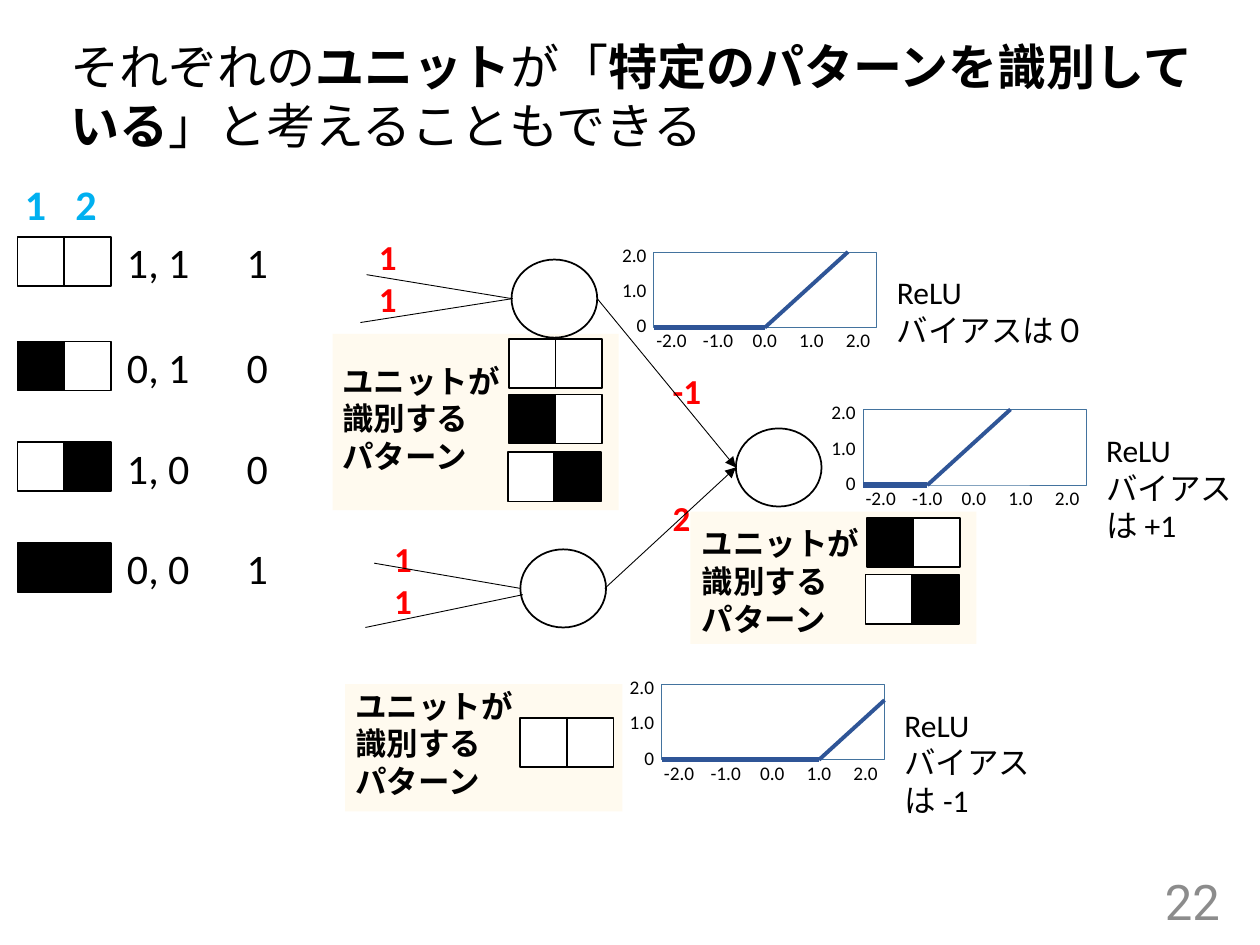
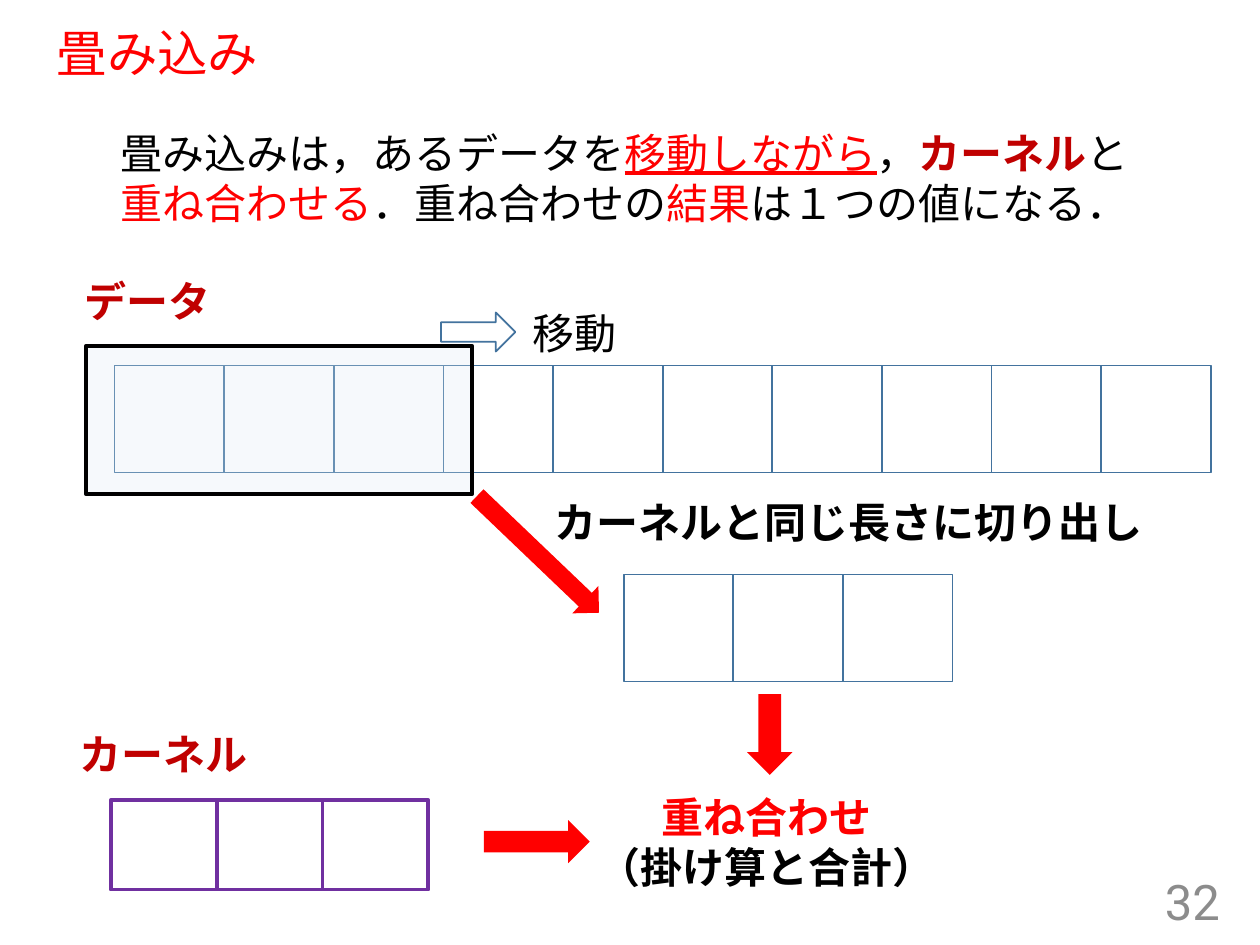
from lxml import etree
from pptx import Presentation
from pptx.dml.color import RGBColor
from pptx.enum import shapes, text
from pptx.oxml import ns
from pptx import util as u

COLORS = {
    "black": "000000", "white": "FFFFFF", "red": "FF0000", "dark red": "C00000",
    "cyan": "00B0F0", "gray": "8C8C8C", "cream": "FFF2CC", "pale blue": "DEEBF7",
    "steel": "43739E", "curve": "2F5597", "purple": "7030A0",
}
KINDS = shapes.MSO_SHAPE
LEFT, CENTER, RIGHT = text.PP_ALIGN.LEFT, text.PP_ALIGN.CENTER, text.PP_ALIGN.RIGHT
TOP, MIDDLE = text.MSO_ANCHOR.TOP, text.MSO_ANCHOR.MIDDLE

presentation = Presentation()
presentation.slide_width, presentation.slide_height = u.Inches(10), u.Inches(7.5)
COLUMN = presentation.slide_width / 100
ROW = presentation.slide_height / 75


def put(slide, kind, left, top, width, height, fill=None, line=None, weight=1, alpha=None):
    box = [int(left * COLUMN), int(top * ROW), int(width * COLUMN), int(height * ROW)]
    if kind is None:
        return slide.shapes.add_textbox(*box)
    shape = slide.shapes.add_shape(kind, *box)
    shape.shadow.inherit = False
    for part, color in ((shape.fill, fill), (shape.line.fill, line)):
        if color:
            part.solid()
            part.fore_color.rgb = RGBColor.from_string(COLORS[color])
        else:
            part.background()
    if line:
        shape.line.width = u.Pt(weight)
    if alpha:
        color_element = shape._element.spPr.find(ns.qn("a:solidFill"))[0]
        etree.SubElement(color_element, ns.qn("a:alpha"), val=str(alpha * 1000))
    return shape


def write(shape, paragraphs, align=LEFT, anchor=TOP, spacing=None, color="black", **base):
    frame = shape.text_frame
    for name, value in {"word_wrap": True, "auto_size": text.MSO_AUTO_SIZE.NONE,
                        "vertical_anchor": anchor}.items():
        setattr(frame, name, value)
    for index, runs in enumerate(paragraphs):
        paragraph = frame.add_paragraph() if index else frame.paragraphs[0]
        paragraph.alignment = align
        paragraph.line_spacing = spacing
        for words, changes in [(runs, {})] if isinstance(runs, str) else runs:
            run = paragraph.add_run()
            run.text = words
            values = {"name": "Calibri", "bold": False, "color": color, **base, **changes}
            run.font.color.rgb = RGBColor.from_string(COLORS[values.pop("color")])
            values["size"] = u.Pt(values["size"])
            for name, value in values.items():
                setattr(run.font, name, value)
            etree.SubElement(run._r.get_or_add_rPr(), ns.qn("a:ea"), typeface="Calibri")


BOLD = {"bold": True}
RED = {"color": "red"}
pages = [
    ("22", (4.6, 2.4, 93, 10.4),
     [[("それぞれの", {}), ("ユニット", BOLD), ("が「", {}), ("特定のパターンを識別して", BOLD)],
      [("いる", BOLD), ("」と考えることもできる", {})]],
     {"size": 28}),
    ("32", (3.5, 1.9, 92.5, 5.1), ["畳み込み"],
     {"size": 28.8, "name": "Roboto", "color": "red", "anchor": MIDDLE, "spacing": 0.9}),
]
for number, (left, top, width, height), title, style in pages:
    slide = presentation.slides.add_slide(presentation.slide_layouts[5])
    position = {"left": left * COLUMN, "top": top * ROW,
                "width": width * COLUMN, "height": height * ROW}
    for name, value in position.items():
        setattr(slide.shapes.title, name, int(value))
    write(slide.shapes.title, title, **style)
    write(put(slide, None, 75.3, 69.5, 22.5, 4), [number], align=RIGHT, anchor=MIDDLE,
          size=28, name="Roboto", color="gray")
units, convolution = presentation.slides

panels = [
    (26.4, 26.5, 22.7, 14, 26.2, 28.2),
    (27.4, 54.3, 22, 10.1, 27.2, 54),
    (54.8, 40.6, 22.7, 10.5, 54.7, 41.1),
]
for left, top, width, height, text_left, text_top in panels:
    put(units, KINDS.RECTANGLE, left, top, width, height, fill="cream", alpha=31)
    write(put(units, None, text_left, text_top, 15, 10.1),
          ["ユニットが", "識別する", "パターン"], size=18, bold=True)

inputs = [(18.8, "11", "1"), (27.1, "01", "0"), (35.1, "10", "0"), (43.1, "00", "1")]
patterns = [(1.4, top, pixels) for top, pixels, answer in inputs]
patterns += [(40.4, 26.9, "11"), (40.4, 31.3, "01"), (40.3, 35.9, "10"),
             (41.3, 57, "11"), (68.8, 41.1, "01"), (68.7, 45.6, "10")]
for left, top, pixels in patterns:
    for index, pixel in enumerate(pixels):
        put(units, KINDS.RECTANGLE, left + index * 3.7, top, 3.7, 3.9,
            fill="white" if pixel == "1" else "black", line="black")

for top, pixels, answer in inputs:
    write(put(units, None, 9.1, top - 0.5, 8, 5), [", ".join(pixels)], size=24)
    write(put(units, None, 18.6, top - 0.5, 4, 5), [answer], size=24)
for left, label in ((1, "1"), (5, "2")):
    write(put(units, None, left, 13.7, 4, 5), [label], size=24, bold=True, color="cyan")

for left, top in ((40.6, 20.6), (41.3, 43.6), (58.4, 34)):
    put(units, KINDS.OVAL, left, top, 6.8, 6.2, line="black")
weights = [(29.1, 18.2, ["1", "1"]), (30.3, 42.2, ["1", "1"]),
           (52.4, 28.8, ["-1"]), (52.4, 38.9, ["2"])]
for left, top, values in weights:
    write(put(units, None, left, top, 5, 7.8), values, size=20, bold=True, color="red")

lines = [
    (29.1, 21.8, 40.6, 23.7, "black", 0.5, False),
    (28.6, 25.6, 40.7, 23.7, "black", 0.5, False),
    (29.7, 44.7, 41.3, 46.7, "black", 0.5, False),
    (29, 49.8, 41.5, 47.2, "black", 0.5, False),
    (47.4, 23.7, 58.4, 37.1, "black", 0.5, True),
    (48, 46.7, 58.4, 37.1, "black", 0.5, True),
]

PLOT_WIDTH, PLOT_HEIGHT, TICK_STEP = 17.7, 6, 3.7
plots = [
    (51.9, 20, 0, ["ReLU", "バイアスは０"]),
    (68.5, 32.5, 1, ["ReLU", "バイアス", "は +1"]),
    (52.5, 54.3, -1, ["ReLU", "バイアス", "は -1"]),
]
for left, top, bias, caption in plots:
    put(units, KINDS.RECTANGLE, left, top, PLOT_WIDTH, PLOT_HEIGHT,
        fill="white", line="steel", weight=0.5)
    for index, label in enumerate(["2.0", "1.0", "0"]):
        write(put(units, None, left - 4.6, top - 1.2 + index * 2.8, 5, 2.8), [label],
              align=RIGHT, size=11)
    for index, label in enumerate(["-2.0", "-1.0", "0.0", "1.0", "2.0"]):
        write(put(units, None, left - 1.6 + index * TICK_STEP, top + 5.6, 6, 2.8), [label],
              align=CENTER, size=11)
    write(put(units, None, left + 18.3, top + 1.2, 12.6 if bias else 18, 10.1), caption, size=18)
    kink = 8.8 - bias * TICK_STEP
    run_length = min(6.6, PLOT_WIDTH - kink)
    base = top + PLOT_HEIGHT
    lines += [
        (left, base, left + kink, base, "curve", 3, False),
        (left + kink, base, left + kink + run_length, base - run_length * 0.91,
         "curve", 2.25, False),
    ]

for x1, y1, x2, y2, color, weight, arrow in lines:
    connector = units.shapes.add_connector(
        shapes.MSO_CONNECTOR.STRAIGHT,
        int(x1 * COLUMN), int(y1 * ROW), int(x2 * COLUMN), int(y2 * ROW))
    connector.line.color.rgb = RGBColor.from_string(COLORS[color])
    connector.line.width = u.Pt(weight)
    if arrow:
        etree.SubElement(connector.line._get_or_add_ln(), ns.qn("a:tailEnd"), type="triangle")
    etree.SubElement(connector._element.spPr, ns.qn("a:effectLst"))

cell_rows = [
    (9.1, 29, 10, 8.7, 8.5, "steel", 1),
    (49.5, 45.6, 3, 8.7, 8.5, "steel", 1),
    (8.8, 63.5, 3, 8.4, 7.1, "purple", 2.25),
]
for left, top, count, width, height, color, weight in cell_rows:
    for index in range(count):
        put(convolution, KINDS.RECTANGLE, left + index * width, top, width, height,
            line=color, weight=weight)
put(convolution, KINDS.RECTANGLE, 6.8, 27.5, 30.7, 11.7,
    fill="pale blue", line="black", weight=2.25, alpha=25)

put(convolution, KINDS.RIGHT_ARROW, 35, 24.8, 5.9, 3.1, line="steel")
cut_arrow = put(convolution, KINDS.DOWN_ARROW, 41.2, 37.3, 3, 13.4, fill="red")
cut_arrow.rotation = 313.7
put(convolution, KINDS.DOWN_ARROW, 59.3, 55.1, 3.6, 6.4, fill="red")
put(convolution, KINDS.RIGHT_ARROW, 38.4, 65.1, 8.4, 3.4, fill="red")

HEADING = {"name": "Noto Sans CJK JP", "color": "dark red", "bold": True}
labels = [
    (8.6, 9.6, 85, 9.1,
     [[("畳み込みは，あるデータを", {}), ("移動しながら", {**RED, "underline": True}), ("，", {}),
       ("カーネル", {"color": "dark red", **BOLD}), ("と", {})],
      [("重ね合わせる", RED), ("．重ね合わせの", {}), ("結果", RED),
       ("は１つの値になる．", {})]], {}),
    (41.3, 23.9, 11, 5, ["移動"], {}),
    (43, 38.9, 50, 5, ["カーネルと同じ長さに切り出し"], BOLD),
    (46.4, 62.3, 28.9, 9.1, [[("重ね合わせ", RED)], "（掛け算と合計）"],
     {"align": CENTER, **BOLD}),
    (5.7, 21.4, 13, 5, ["データ"], HEADING),
    (5.3, 57.3, 17, 5, ["カーネル"], HEADING),
]
for left, top, width, height, paragraphs, style in labels:
    write(put(convolution, None, left, top, width, height), paragraphs, size=24, **style)

presentation.save("out.pptx")
